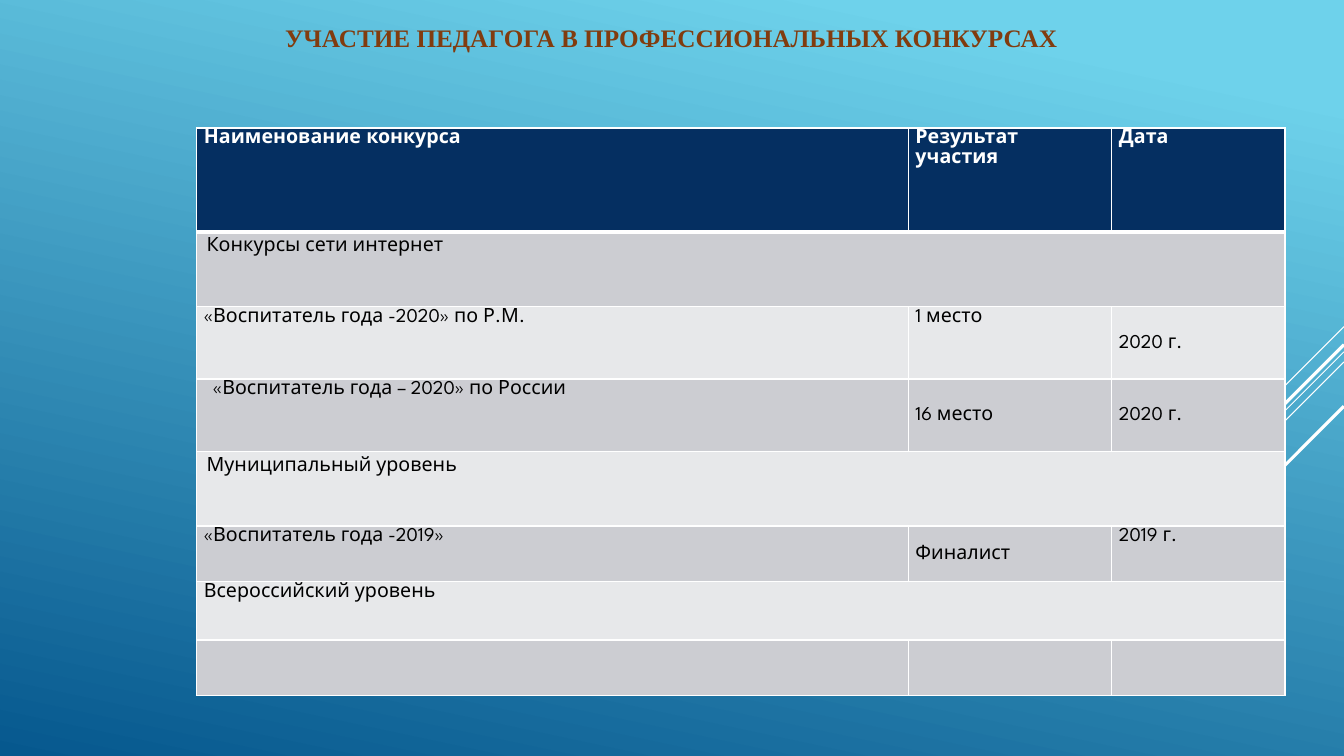
from lxml import etree
from pptx import Presentation
from pptx.dml.color import RGBColor
from pptx.enum import shapes, text
from pptx.oxml import ns
from pptx.util import Pt

COLORS = {
    "sky": "6ED2EB",
    "deep": "06588E",
    "white": "FFFFFF",
    "black": "000000",
    "title": "813C0F",
    "header": "052F61",
    "dark_band": "CCCDD2",
    "light_band": "E7E8EA",
}
TITLE = "УЧАСТИЕ ПЕДАГОГА В ПРОФЕССИОНАЛЬНЫХ КОНКУРСАХ"
ROWS = [
    ("Наименование конкурса", "Результат участия", "Дата"),
    ("Конкурсы сети интернет",),
    ("«Воспитатель года -2020» по Р.М.", "1 место", "2020 г."),
    ("«Воспитатель года – 2020» по России", "16 место", "2020 г."),
    ("Муниципальный уровень",),
    ("«Воспитатель года -2019»", "Финалист", "2019 г."),
    ("Всероссийский уровень",),
    ("", "", ""),
]
ROW_HEIGHTS = [74.2, 53.3, 51.8, 51.8, 53.3, 39.6, 41.8, 39.6]
COLUMN_WIDTHS = [508.3, 145.4, 123.8]
TABLE_LEFT, TABLE_TOP = 140.4, 91.4
MIDDLE_CELLS = {(2, 2), (3, 1), (3, 2), (5, 1)}
ROOMY_ROWS = {1, 4}
INDENTS = {(3, 0): 6.5}
SLIDE_WIDTH, SLIDE_HEIGHT = 960, 540
DIAGONALS = [
    (233.3, 72, 0.75),
    (251.3, 234.7, 0.75),
    (258.5, 149.4, 0.75),
    (246.2, 137.5, 2.25),
    (290.2, 100.1, 2.25),
]


def color(name):
    return RGBColor.from_string(COLORS[name])


def write(frame, words, *, font="League Spartan", size=14, ink="black", bold=False,
          align=text.PP_ALIGN.LEFT, spacing=None, after=0, indent=0):
    paragraph = frame.paragraphs[0]
    paragraph.alignment = align
    paragraph.space_after = Pt(after)
    if spacing:
        paragraph.line_spacing = spacing
    if indent:
        paragraph._p.get_or_add_pPr().set("marL", str(Pt(indent)))
    run = paragraph.add_run()
    run.text = words
    run.font.name = font
    run.font.size = Pt(size)
    run.font.bold = bold
    run.font.color.rgb = color(ink)


def add_borders(cell, row):
    properties = cell._tc.get_or_add_tcPr()
    widths = {"L": 1, "R": 1, "T": 3 if row == 1 else 1, "B": 3 if row == 0 else 1}
    for side, width in widths.items():
        line = etree.SubElement(properties, ns.qn(f"a:ln{side}"), w=str(Pt(width)))
        fill = etree.SubElement(line, ns.qn("a:solidFill"))
        etree.SubElement(fill, ns.qn("a:srgbClr"), val=COLORS["white"])


def paint_background(slide):
    fill = slide.background.fill
    fill.gradient()
    fill.gradient_angle = 258
    for stop, (name, position) in zip(fill.gradient_stops, [("sky", 0.1), ("deep", 1)]):
        stop.color.rgb = color(name)
        stop.position = position


def add_diagonals(slide):
    for top, run, width in DIAGONALS:
        line = slide.shapes.add_connector(
            shapes.MSO_CONNECTOR.STRAIGHT,
            Pt(SLIDE_WIDTH), Pt(top), Pt(SLIDE_WIDTH - run), Pt(top + run))
        line.line.color.rgb = color("white")
        line.line.width = Pt(width)
        etree.SubElement(line._element.spPr, ns.qn("a:effectLst"))


def add_title(slide):
    box = slide.shapes.add_textbox(Pt(72), Pt(12.2), Pt(815), Pt(29))
    box.text_frame.word_wrap = True
    write(box.text_frame, TITLE, font="Times New Roman", size=18, ink="title",
          bold=True, align=text.PP_ALIGN.CENTER)


def add_contests(slide):
    table = slide.shapes.add_table(
        len(ROWS), len(COLUMN_WIDTHS), Pt(TABLE_LEFT), Pt(TABLE_TOP),
        Pt(sum(COLUMN_WIDTHS)), Pt(sum(ROW_HEIGHTS))).table
    table.first_row = table.horz_banding = False
    for column, width in zip(table.columns, COLUMN_WIDTHS):
        column.width = Pt(width)
    for row, words in enumerate(ROWS):
        table.rows[row].height = Pt(ROW_HEIGHTS[row])
        if len(words) == 1:
            table.cell(row, 0).merge(table.cell(row, len(COLUMN_WIDTHS) - 1))
        band = "header" if row == 0 else "dark_band" if row % 2 else "light_band"
        for column in range(len(COLUMN_WIDTHS)):
            cell = table.cell(row, column)
            add_borders(cell, row)
            cell.fill.solid()
            cell.fill.fore_color.rgb = color(band)
            if row not in ROOMY_ROWS:
                cell.margin_left = cell.margin_right = Pt(5.2)
                cell.margin_top, cell.margin_bottom = Pt(0.7), Pt(0)
            if (row, column) in MIDDLE_CELLS:
                cell.vertical_anchor = text.MSO_ANCHOR.MIDDLE
            if column < len(words) and words[column]:
                write(cell.text_frame, words[column], bold=row == 0,
                      ink="white" if row == 0 else "black", spacing=1.07, after=8,
                      indent=INDENTS.get((row, column), 0))


def main():
    presentation = Presentation()
    presentation.slide_width = Pt(SLIDE_WIDTH)
    presentation.slide_height = Pt(SLIDE_HEIGHT)
    slide = presentation.slides.add_slide(presentation.slide_layouts[6])
    paint_background(slide)
    add_diagonals(slide)
    add_title(slide)
    add_contests(slide)
    presentation.save("out.pptx")


if __name__ == "__main__":
    main()
